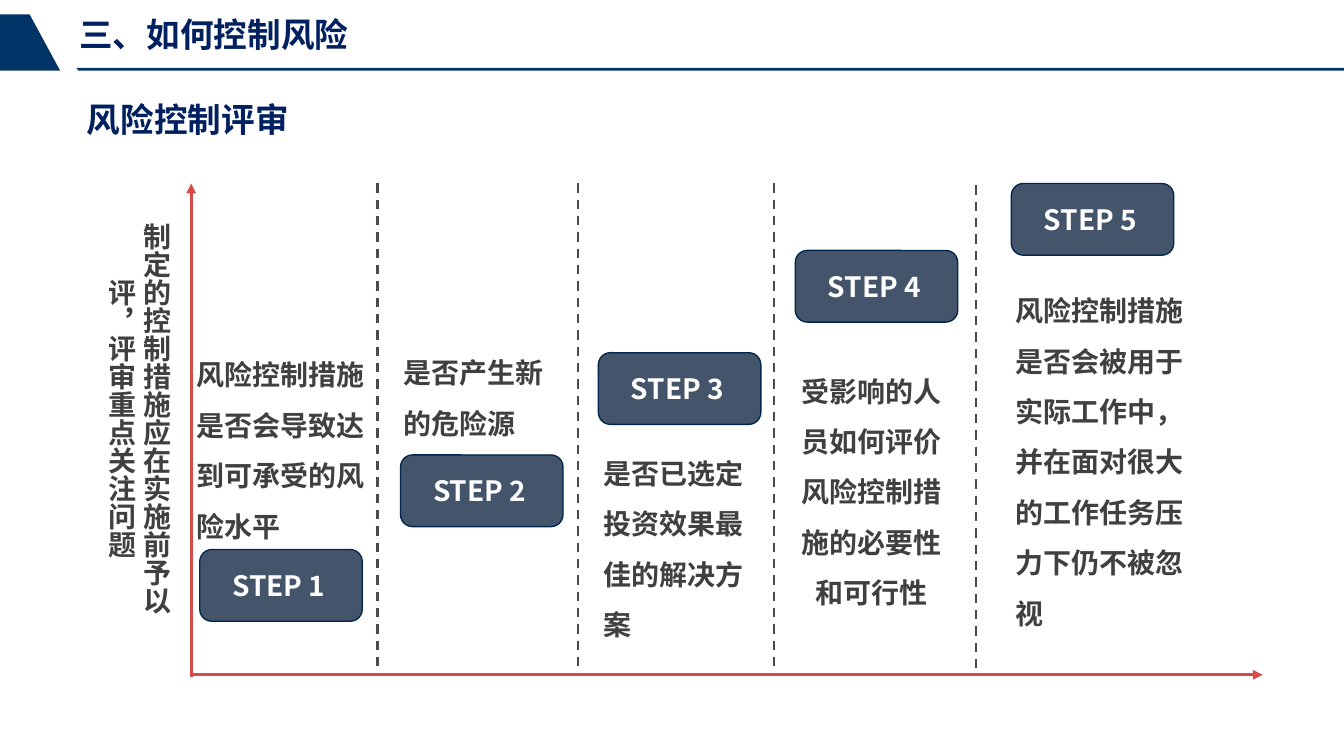
from dataclasses import dataclass

import lxml.etree
import pptx
import pptx.dml.color
import pptx.enum.dml
import pptx.enum.shapes
import pptx.enum.text
import pptx.oxml.ns
import pptx.util

Inches = pptx.util.Inches
Align = pptx.enum.text.PP_ALIGN
Anchor = pptx.enum.text.MSO_ANCHOR

NAVY = "003366"
HEADING = "002060"
RED = "D74B4B"
DIVIDER = "4D4948"
BODY = "404040"
CARD = "44546A"
CARD_EDGE = "00264B"
WHITE = "FFFFFF"
FONT_JP = "Noto Sans CJK JP"
FONT_SC = "Noto Sans CJK SC"
BODY_SIZE = 21.1
HEADING_SIZE = 25.3


@dataclass
class Box:
    left: float
    top: float
    width: float
    height: float

    def emu(self) -> list:
        return [Inches(v) for v in (self.left, self.top, self.width, self.height)]


@dataclass
class Step:
    card_left: float
    card_top: float
    question: str
    question_box: Box
    font: str = FONT_JP
    align: Align = Align.LEFT


STEPS = [
    Step(2.09, 5.75, "风险控制措施是否会导致达到可承受的风险水平", Box(1.96, 3.52, 2.16, 2.23)),
    Step(4.19, 4.76, "是否产生新的危险源", Box(4.12, 3.5, 1.81, 1.17)),
    Step(6.26, 3.69, "是否已选定投资效果最佳的解决方案", Box(6.21, 4.55, 1.81, 2.23), FONT_SC),
    Step(8.32, 2.62, "受影响的人员如何评价风险控制措施的必要性和可行性",
         Box(8.21, 3.69, 1.81, 2.76), align=Align.CENTER),
    Step(10.58, 1.92, "风险控制措施是否会被用于实际工作中，并在面对很大的工作任务压力下仍不被忽视",
         Box(10.53, 2.85, 2.11, 3.83)),
]
DIVIDERS = [(3.95, 1.92), (6.05, 1.92), (8.1, 1.92), (10.21, 1.94)]
DIVIDER_HEIGHT = 5.08
HEADER_RULE = [(0.8, 0.71), (14.06, 0.71), (14.06, 0.74), (0.82, 0.74)]
HEADER_TAB = [(0.31, 0.15), (0.63, 0.74), (0, 0.74), (0, 0.15)]


def rgb(value: str) -> pptx.dml.color.RGBColor:
    return pptx.dml.color.RGBColor.from_string(value)


def write(shape, text: str, size: float, font: str, color: str, align=Align.LEFT,
          spacing=None, anchor=Anchor.TOP) -> None:
    frame = shape.text_frame
    frame.word_wrap = True
    frame.vertical_anchor = anchor
    paragraph = frame.paragraphs[0]
    paragraph.alignment = align
    paragraph.line_spacing = spacing
    run = paragraph.add_run()
    run.text = text
    run.font.size = pptx.util.Pt(size)
    run.font.bold = True
    run.font.name = font
    run.font.color.rgb = rgb(color)
    east_asian = lxml.etree.SubElement(run.font._element, pptx.oxml.ns.qn("a:ea"))
    east_asian.set("typeface", font)


def write_heading(shape, text: str) -> None:
    frame = shape.text_frame
    frame.margin_left = frame.margin_top = frame.margin_right = frame.margin_bottom = 0
    frame.auto_size = pptx.enum.text.MSO_AUTO_SIZE.SHAPE_TO_FIT_TEXT
    write(shape, text, HEADING_SIZE, "Arial", HEADING)
    frame.paragraphs[0].space_after = pptx.util.Pt(6)


def add_text(slide, box: Box):
    shape = slide.shapes.add_textbox(*box.emu())
    shape.text_frame.auto_size = pptx.enum.text.MSO_AUTO_SIZE.SHAPE_TO_FIT_TEXT
    return shape


def add_outline(slide, points: list) -> None:
    corners = [(Inches(x), Inches(y)) for x, y in points]
    builder = slide.shapes.build_freeform(*corners[0])
    builder.add_line_segments(corners[1:], close=True)
    outline = builder.convert_to_shape()
    outline.shadow.inherit = False
    outline.fill.solid()
    outline.fill.fore_color.rgb = rgb(NAVY)
    outline.line.fill.background()


def add_line(slide, start: tuple, end: tuple, color: str, width: float, arrow: bool) -> None:
    line = slide.shapes.add_connector(
        pptx.enum.shapes.MSO_CONNECTOR.STRAIGHT, *[Inches(v) for v in start + end])
    line.line.color.rgb = rgb(color)
    line.line.width = pptx.util.Pt(width)
    if arrow:
        tail = lxml.etree.SubElement(line.line._get_or_add_ln(), pptx.oxml.ns.qn("a:tailEnd"))
        tail.set("type", "triangle")
    else:
        line.line.dash_style = pptx.enum.dml.MSO_LINE.DASH
    lxml.etree.SubElement(line._element.spPr, pptx.oxml.ns.qn("a:effectLst"))


def add_step(slide, number: int, step: Step) -> None:
    question = add_text(slide, step.question_box)
    write(question, step.question, BODY_SIZE, step.font, BODY, step.align, 1.5)
    card = slide.shapes.add_shape(
        pptx.enum.shapes.MSO_SHAPE.ROUNDED_RECTANGLE,
        *Box(step.card_left, step.card_top, 1.7, 0.75).emu())
    card.shadow.inherit = False
    card.fill.solid()
    card.fill.fore_color.rgb = rgb(CARD)
    card.line.color.rgb = rgb(CARD_EDGE)
    card.line.width = pptx.util.Pt(1)
    card.text_frame.margin_right = Inches(0.14)
    write(card, f"STEP {number}", BODY_SIZE, FONT_SC, WHITE, Align.CENTER, anchor=Anchor.MIDDLE)


def main() -> None:
    deck = pptx.Presentation()
    deck.slide_width, deck.slide_height = Inches(14.06), Inches(7.91)
    slide = deck.slides.add_slide(deck.slide_layouts[5])

    title = slide.shapes.title
    title.left, title.top, title.width, title.height = Box(0.83, 0.15, 4.54, 0.43).emu()
    write_heading(title, "三、如何控制风险")
    write_heading(add_text(slide, Box(0.91, 1.03, 4.54, 0.43)), "风险控制评审")
    for points in (HEADER_RULE, HEADER_TAB):
        add_outline(slide, points)

    add_line(slide, (2, 7.08), (2, 1.92), RED, 2.5, arrow=True)
    add_line(slide, (2, 7.06), (13.21, 7.06), RED, 2.5, arrow=True)
    for x, top in DIVIDERS:
        add_line(slide, (x, top), (x, top + DIVIDER_HEIGHT), DIVIDER, 1.75, arrow=False)

    review_note = add_text(slide, Box(0.95, 2.23, 0.92, 4.56))
    write(review_note, "制定的控制措施应在实施前予以评，评审重点关注问题",
          BODY_SIZE, FONT_JP, BODY, Align.CENTER, pptx.util.Pt(26))
    review_note.text_frame._txBody.bodyPr.set("vert", "eaVert")

    for number, step in enumerate(STEPS, start=1):
        add_step(slide, number, step)

    deck.save("out.pptx")


if __name__ == "__main__":
    main()
